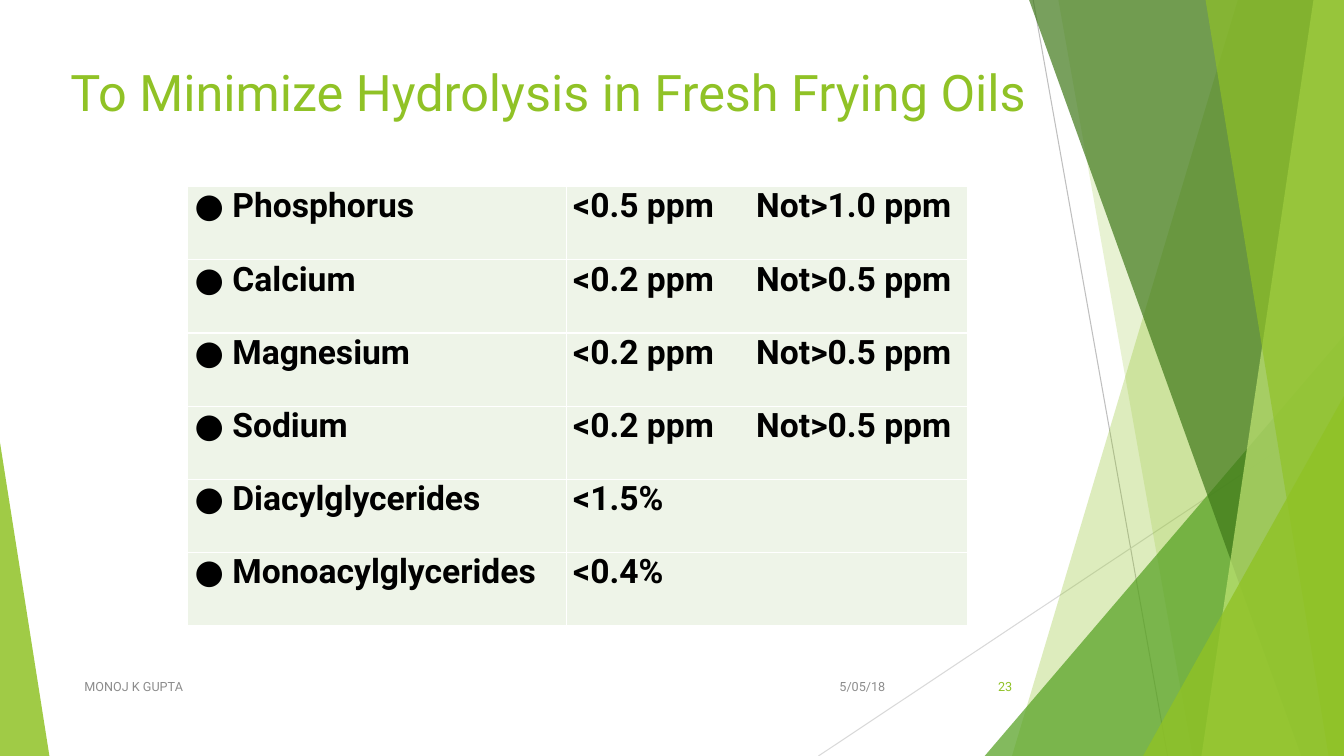
from dataclasses import dataclass

import lxml.etree
import pptx
import pptx.dml.color
import pptx.enum.shapes
import pptx.enum.text
import pptx.oxml.ns
import pptx.util

Pt = pptx.util.Pt
Align = pptx.enum.text.PP_ALIGN
Anchor = pptx.enum.text.MSO_ANCHOR
qn = pptx.oxml.ns.qn


@dataclass(frozen=True)
class Theme:
    font: str = "Roboto"
    lime: str = "90C226"
    green: str = "54A021"
    forest: str = "3F7819"
    pale: str = "C0E474"
    grey: str = "8C8C8C"
    ink: str = "000000"
    cell: str = "EEF4E8"
    border: str = "FFFFFF"
    title_size: float = 36
    table_size: float = 24
    footer_size: float = 9


@dataclass(frozen=True)
class Ray:
    start: tuple[float, float]
    end: tuple[float, float]
    color: str


@dataclass(frozen=True)
class Band:
    """Area from a slanted left edge to the right side of the slide."""
    top_x: float
    bottom_x: float
    color: str
    opacity: int


@dataclass(frozen=True)
class Wedge:
    """Right triangle standing on the bottom of the slide."""
    left: float
    top: float
    width: float
    apex: float
    color: str
    opacity: int


@dataclass(frozen=True)
class Label:
    text: str
    left: float
    top: float
    width: float
    height: float
    size: float
    color: str
    align: Align
    anchor: Anchor = Anchor.MIDDLE


THEME = Theme()
WIDTH, HEIGHT = 960, 540

RAYS = [
    Ray((738, 0), (834, HEIGHT), "BFBFBF"),
    Ray((WIDTH, 290.2), (584.6, HEIGHT), "D9D9D9"),
]
FACETS = [
    Band(884.2, 722.9, THEME.lime, 30),
    Band(756, 851.8, THEME.lime, 20),
    Wedge(703.4, 239.8, 256.6, 1, THEME.green, 72),
    Band(735.1, 929.5, THEME.forest, 70),
    Band(938.2, 858.2, THEME.pale, 70),
    Band(861.1, 949, THEME.lime, 65),
    Wedge(816.5, 283, 143.5, 1, THEME.lime, 80),
    Wedge(0, 316.1, 35.3, 0, THEME.lime, 85),
]
LABELS = [
    Label("To Minimize Hydrolysis in Fresh Frying Oils", 13.7, 40.3, 756, 69.8,
          THEME.title_size, THEME.lime, Align.CENTER, Anchor.TOP),
    Label("5/05/18", 567.4, 475.9, 72, 28.8, THEME.footer_size, THEME.grey, Align.RIGHT),
    Label("MONOJ K GUPTA", 53.3, 475.9, 496, 28.8, THEME.footer_size, THEME.grey, Align.LEFT),
    Label("23", 676.1, 475.9, 54, 28.8, THEME.footer_size, THEME.lime, Align.RIGHT),
]
LIMITS = [
    ("Phosphorus", "<0.5 ppm\tNot>1.0 ppm"),
    ("Calcium", "<0.2 ppm\tNot>0.5 ppm"),
    ("Magnesium", "<0.2 ppm\tNot>0.5 ppm"),
    ("Sodium", "<0.2 ppm\tNot>0.5 ppm"),
    ("Diacylglycerides", "<1.5%"),
    ("Monoacylglycerides", "<0.4%"),
]
TABLE_LEFT, TABLE_TOP, ROW_HEIGHT = 134, 133.4, 52.25
COLUMN_WIDTHS = (270.5, 287)
BULLET_INDENT, LIMIT_TAB = 27, 130.7


def rgb(color: str) -> pptx.dml.color.RGBColor:
    return pptx.dml.color.RGBColor.from_string(color)


def add_child(parent, tag: str, **attributes: str):
    return lxml.etree.SubElement(parent, qn(tag), attributes)


def write(para, text: str, *, size: float, color: str, bold: bool = False,
          align: Align = Align.LEFT, after: float = 0) -> None:
    para.alignment = align
    para.space_after = Pt(after)
    span = para.add_run()
    span.text = text
    span.font.name = THEME.font
    span.font.size = Pt(size)
    span.font.bold = bold
    span.font.color.rgb = rgb(color)


def draw_ray(page, ray: Ray) -> None:
    line = page.shapes.add_connector(
        pptx.enum.shapes.MSO_CONNECTOR.STRAIGHT, *map(Pt, ray.start + ray.end))
    line.line.color.rgb = rgb(ray.color)
    line.line.width = Pt(0.75)
    add_child(line._element.spPr, "a:effectLst")


def draw_facet(page, facet: Band | Wedge) -> None:
    if isinstance(facet, Band):
        builder = page.shapes.build_freeform(Pt(facet.top_x), 0)
        corners = [(WIDTH, 0), (WIDTH, HEIGHT), (facet.bottom_x, HEIGHT)]
        builder.add_line_segments([(Pt(x), Pt(y)) for x, y in corners])
        shape = builder.convert_to_shape()
    else:
        shape = page.shapes.add_shape(
            pptx.enum.shapes.MSO_SHAPE.ISOSCELES_TRIANGLE, Pt(facet.left), Pt(facet.top),
            Pt(facet.width), Pt(HEIGHT - facet.top))
        shape.adjustments[0] = facet.apex
    shape.shadow.inherit = False
    shape.line.fill.background()
    shape.fill.solid()
    shape.fill.fore_color.rgb = rgb(facet.color)
    tint = shape._element.spPr.find(qn("a:solidFill"))[0]
    add_child(tint, "a:alpha", val=str(facet.opacity * 1000))


def draw_label(page, label: Label) -> None:
    box = page.shapes.add_textbox(
        Pt(label.left), Pt(label.top), Pt(label.width), Pt(label.height))
    frame = box.text_frame
    frame.word_wrap = True
    frame.vertical_anchor = label.anchor
    write(frame.paragraphs[0], label.text, size=label.size, color=label.color,
          align=label.align)


def style_cell(cell) -> None:
    cell.margin_left = cell.margin_right = Pt(5)
    cell.margin_top = cell.margin_bottom = 0
    properties = cell._tc.get_or_add_tcPr()
    for side in ("a:lnL", "a:lnR", "a:lnT", "a:lnB"):
        edge = add_child(properties, side, w=str(Pt(1)))
        add_child(add_child(edge, "a:solidFill"), "a:srgbClr", val=THEME.border)
    cell.fill.solid()
    cell.fill.fore_color.rgb = rgb(THEME.cell)


def draw_table(page) -> None:
    table = page.shapes.add_table(
        len(LIMITS), len(COLUMN_WIDTHS), Pt(TABLE_LEFT), Pt(TABLE_TOP),
        Pt(sum(COLUMN_WIDTHS)), Pt(ROW_HEIGHT * len(LIMITS))).table
    table.first_row = table.horz_banding = False
    for column, width in zip(table.columns, COLUMN_WIDTHS):
        column.width = Pt(width)
    for row, texts in zip(table.rows, LIMITS):
        row.height = Pt(ROW_HEIGHT)
        for index, (cell, text) in enumerate(zip(row.cells, texts)):
            style_cell(cell)
            para = cell.text_frame.paragraphs[0]
            properties = para._p.get_or_add_pPr()
            if index == 0:
                properties.set("marL", str(Pt(BULLET_INDENT)))
                properties.set("indent", str(-Pt(BULLET_INDENT)))
                add_child(properties, "a:buFont", typeface=THEME.font)
                add_child(properties, "a:buChar", char="●")
            elif "\t" in text:
                tabs = add_child(properties, "a:tabLst")
                add_child(tabs, "a:tab", pos=str(Pt(LIMIT_TAB)), algn="l")
            write(para, text, size=THEME.table_size, color=THEME.ink, bold=True, after=3)


def main() -> None:
    deck = pptx.Presentation()
    deck.slide_width, deck.slide_height = Pt(WIDTH), Pt(HEIGHT)
    page = deck.slides.add_slide(deck.slide_layouts[6])
    # Background rays and facets
    for ray in RAYS:
        draw_ray(page, ray)
    for facet in FACETS:
        draw_facet(page, facet)
    # Title and footer
    for label in LABELS:
        draw_label(page, label)
    # Limits for each contaminant
    draw_table(page)
    deck.save("out.pptx")


if __name__ == "__main__":
    main()
